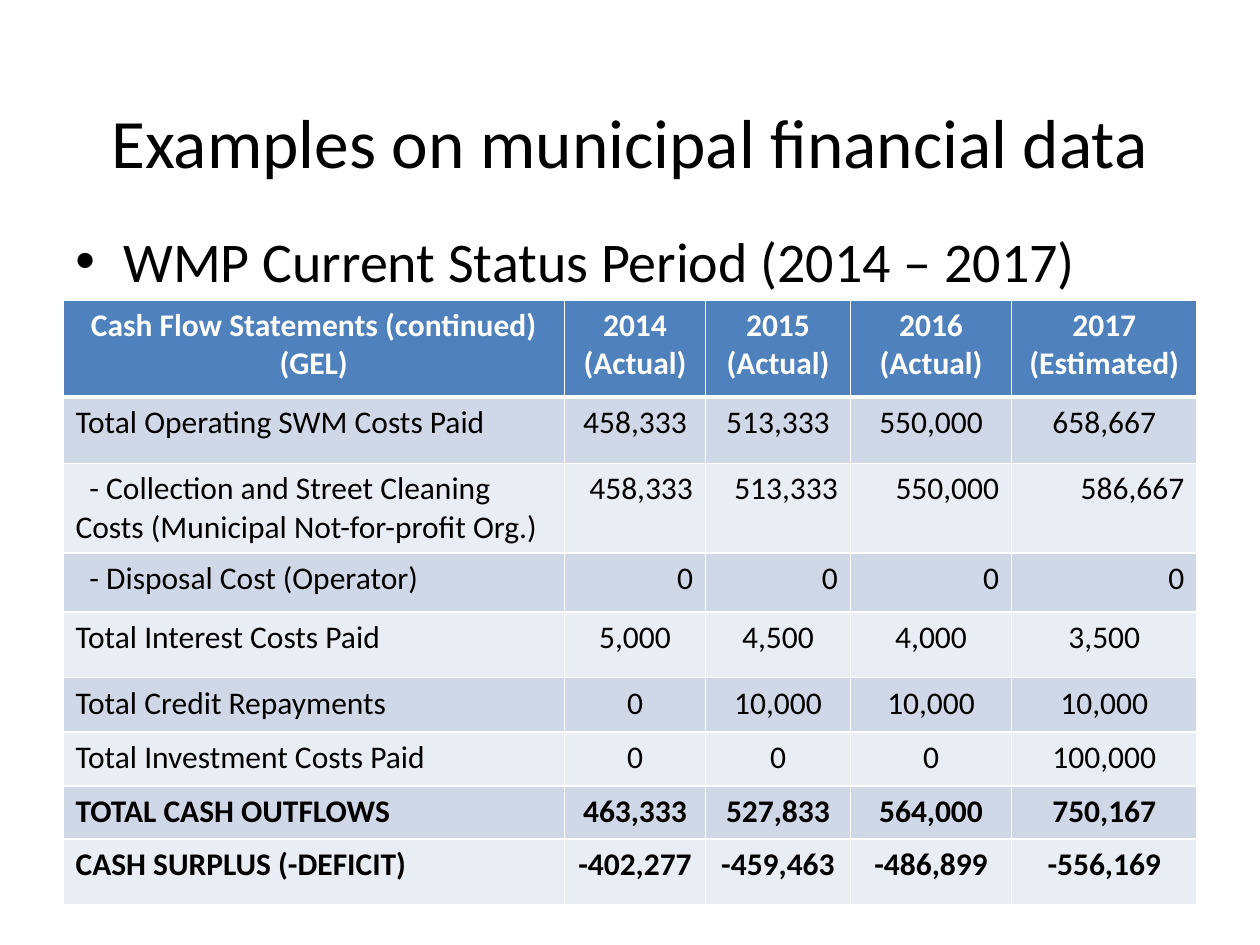
from lxml.etree import SubElement
from pptx import Presentation
from pptx.dml.color import RGBColor
from pptx.enum.text import MSO_ANCHOR, MSO_AUTO_SIZE, PP_ALIGN
from pptx.oxml.ns import qn
from pptx.util import Inches, Pt

FONT = "Calibri"
COLORS = {
    "text": "000000",
    "white": "FFFFFF",
    "header": "4F81BD",
    "odd_row": "D0D8E8",
    "even_row": "E9EDF4",
}
COLUMN_WIDTHS = [3.98, 1.12, 1.15, 1.28, 1.47]
ROW_HEIGHTS = [0.77, 0.53, 0.71, 0.47, 0.52, 0.43, 0.43, 0.42, 0.52]
CASH_FLOW = [
    ["Cash Flow Statements (continued) (GEL)", "2014 (Actual)", "2015 (Actual)",
     "2016\n(Actual)", "2017 (Estimated)"],
    ["Total Operating SWM Costs Paid", "458,333", "513,333", "550,000", "658,667"],
    ["- Collection and Street Cleaning Costs (Municipal Not-for-profit Org.)",
     "458,333", "513,333", "550,000", "586,667"],
    ["- Disposal Cost (Operator)", "0", "0", "0", "0"],
    ["Total Interest Costs Paid", "5,000", "4,500", "4,000", "3,500"],
    ["Total Credit Repayments", "0", "10,000", "10,000", "10,000"],
    ["Total Investment Costs Paid", "0", "0", "0", "100,000"],
    ["TOTAL CASH OUTFLOWS", "463,333", "527,833", "564,000", "750,167"],
    ["CASH SURPLUS (-DEFICIT)", "-402,277", "-459,463", "-486,899", "-556,169"],
]


def format_paragraph(paragraph, size, color, alignment, bold=False):
    paragraph.alignment = alignment
    for run in paragraph.runs:
        run.font.name = FONT
        run.font.size = Pt(size)
        run.font.bold = bold
        run.font.color.rgb = RGBColor.from_string(COLORS[color])


def set_indent(paragraph, margin, first_line):
    properties = paragraph._p.get_or_add_pPr()
    properties.set("marL", str(Inches(margin)))
    properties.set("indent", str(Inches(first_line)))
    return properties


def add_title(slide, text):
    title = slide.shapes.title
    title.left, title.top = Inches(0.5), Inches(0.69)
    title.width, title.height = Inches(9), Inches(0.86)
    title.text_frame.text = text
    title.text_frame.vertical_anchor = MSO_ANCHOR.MIDDLE
    title.text_frame.auto_size = MSO_AUTO_SIZE.NONE
    format_paragraph(title.text_frame.paragraphs[0], 39.6, "text", PP_ALIGN.CENTER)


def add_bullet(slide, text):
    box = slide.shapes.add_textbox(Inches(0.5), Inches(1.75), Inches(9), Inches(0.6))
    box.text_frame.word_wrap = True
    box.text_frame.text = text
    paragraph = box.text_frame.paragraphs[0]
    properties = set_indent(paragraph, 0.38, -0.38)
    SubElement(properties, qn("a:buFont"), typeface="Arial")
    SubElement(properties, qn("a:buChar"), char="•")
    format_paragraph(paragraph, 32, "text", PP_ALIGN.LEFT)


def set_borders(cell, row_index):
    widths = {
        "a:lnL": 1,
        "a:lnR": 1,
        "a:lnT": 3 if row_index == 1 else 1,
        "a:lnB": 3 if row_index == 0 else 1,
    }
    properties = cell._tc.get_or_add_tcPr()
    for tag, width in widths.items():
        line = SubElement(properties, qn(tag), w=str(Pt(width)))
        fill = SubElement(line, qn("a:solidFill"))
        SubElement(fill, qn("a:srgbClr"), val=COLORS["white"])


def cell_alignment(row_index, column_index, detail):
    if row_index == 0:
        return PP_ALIGN.CENTER
    if column_index == 0:
        return PP_ALIGN.LEFT
    return PP_ALIGN.RIGHT if detail else PP_ALIGN.CENTER


def fill_cell(cell, text, row_index, column_index):
    header = row_index == 0
    detail = CASH_FLOW[row_index][0].startswith("- ")
    bold = header or row_index >= len(CASH_FLOW) - 2
    row_color = "header" if header else "odd_row" if row_index % 2 else "even_row"
    set_borders(cell, row_index)
    cell.fill.solid()
    cell.fill.fore_color.rgb = RGBColor.from_string(COLORS[row_color])
    cell.text_frame.text = text
    for paragraph in cell.text_frame.paragraphs:
        format_paragraph(paragraph, 18, "white" if header else "text",
                         cell_alignment(row_index, column_index, detail), bold)
        if detail and column_index == 0:
            set_indent(paragraph, 0, 0.11)


def add_cash_flow_table(slide):
    table = slide.shapes.add_table(
        len(CASH_FLOW), len(COLUMN_WIDTHS),
        Inches(0.5), Inches(2.38), Inches(9), Inches(sum(ROW_HEIGHTS)),
    ).table
    for column, width in zip(table.columns, COLUMN_WIDTHS):
        column.width = Inches(width)
    for row, height in zip(table.rows, ROW_HEIGHTS):
        row.height = Inches(height)
    for row_index, values in enumerate(CASH_FLOW):
        for column_index, text in enumerate(values):
            fill_cell(table.cell(row_index, column_index), text, row_index, column_index)


def main():
    presentation = Presentation()
    presentation.slide_width = Inches(10)
    presentation.slide_height = Inches(7.5)
    slide = presentation.slides.add_slide(presentation.slide_layouts[5])
    add_title(slide, "Examples on municipal financial data")
    add_bullet(slide, "WMP Current Status Period (2014 – 2017)")
    add_cash_flow_table(slide)
    presentation.save("out.pptx")


if __name__ == "__main__":
    main()
